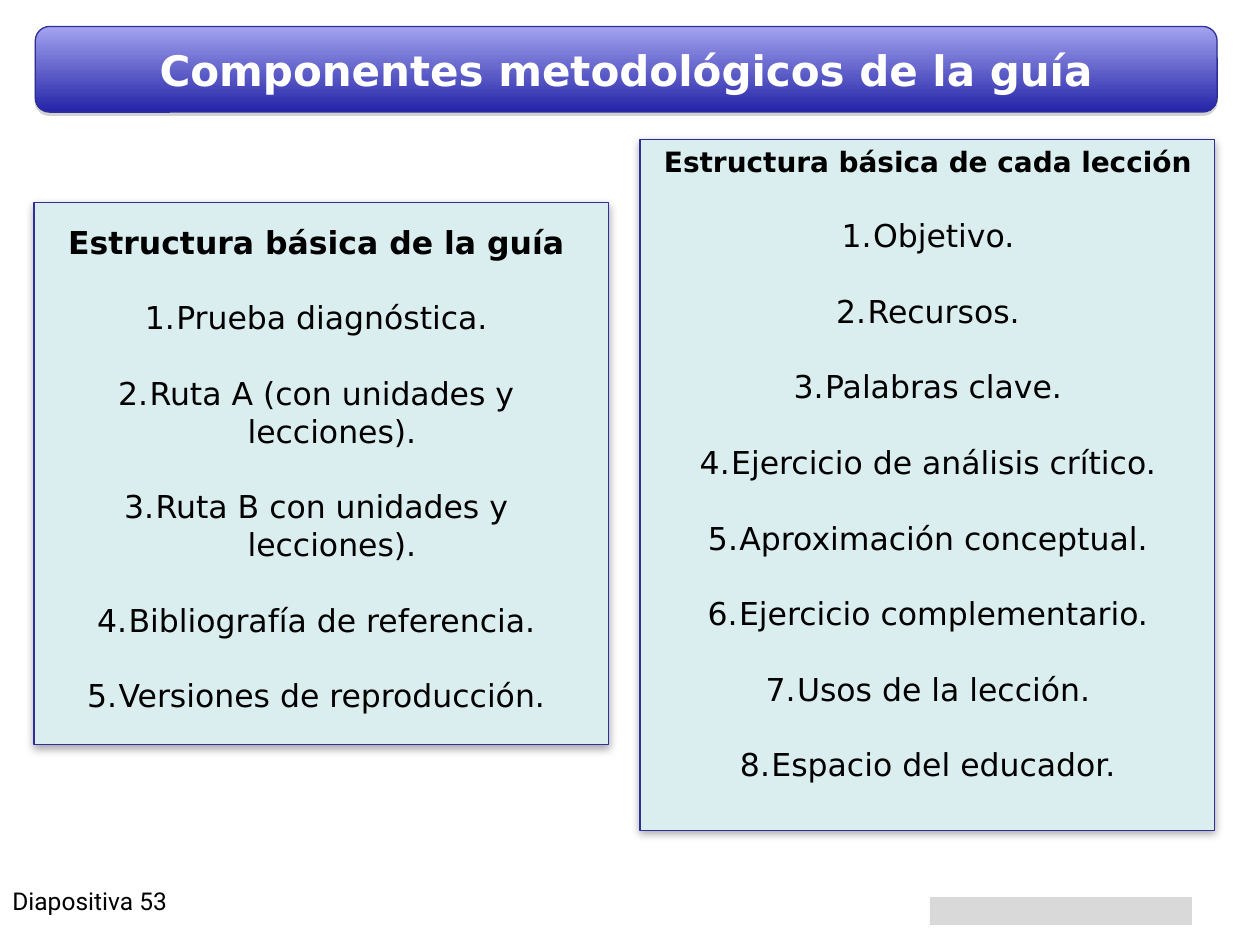
from dataclasses import dataclass

from lxml import etree
from pptx import Presentation
from pptx import util as u
from pptx.dml.color import RGBColor
from pptx.enum import shapes, text
from pptx.oxml import ns

TITLE = "Componentes metodológicos de la guía"
PANELS = [
    {
        "heading": "Estructura básica de la guía",
        "heading_size": 18,
        "items": [
            "Prueba diagnóstica.",
            "Ruta A (con unidades y lecciones).",
            "Ruta B con unidades y lecciones).",
            "Bibliografía de referencia.",
            "Versiones de reproducción.",
        ],
        "frame": (0.27, 1.61, 4.56, 4.3),
        "words": (0.3, 1.72, 4.42, 4.04),
    },
    {
        "heading": "Estructura básica de cada lección",
        "heading_size": 16,
        "items": [
            "Objetivo.",
            "Recursos.",
            "Palabras clave.",
            "Ejercicio de análisis crítico.",
            "Aproximación conceptual.",
            "Ejercicio complementario.",
            "Usos de la lección.",
            "Espacio del educador.",
        ],
        "frame": (5.08, 1.11, 4.56, 5.48),
        "words": (5.15, 1.1, 4.43, 5.22),
    },
]
TITLE_BAR = (0.28, 0.21, 9.38, 0.68)
PAGE_LABEL = ("Diapositiva 53", (0, 6.98, 2.33, 0.52))
FOOTER_MARK = (7.38, 7.12, 2.08, 0.22)


@dataclass(frozen=True)
class Theme:
    panel: str = "DAEDEF"
    outline: str = "2F2F98"
    bar_top: str = "A3A3EF"
    bar_bottom: str = "2424A8"
    ink: str = "000000"
    light: str = "FFFFFF"
    bar_shadow: str = "808080"
    mark: str = "D9D9D9"
    font: str = "DejaVu Sans"
    label_font: str = "Roboto"
    title_size: int = 24
    body_size: int = 18
    label_size: int = 14
    item_gap: float = 21.6
    number_indent: float = 0.25


THEME = Theme()


def inches(area):
    return [u.Inches(value) for value in area]


def fill_solid(shape, color):
    shape.fill.solid()
    shape.fill.fore_color.rgb = RGBColor.from_string(color)


def add_span(para, words, size, font=THEME.font, bold=False, color=THEME.ink):
    span = para.add_run()
    span.text = words
    span.font.size = u.Pt(size)
    span.font.name = font
    span.font.bold = bold
    span.font.color.rgb = RGBColor.from_string(color)


def add_text_box(page, area):
    box = page.shapes.add_textbox(*inches(area))
    box.text_frame.word_wrap = True
    return box.text_frame


def add_block(page, kind, area, shadow_color, blur):
    """Add an outlined shape with a soft shadow straight below it."""
    block = page.shapes.add_shape(kind, *inches(area))
    block.line.color.rgb = RGBColor.from_string(THEME.outline)
    block.line.width = u.Pt(0.75)
    block.shadow.inherit = False
    effects = block.element.spPr.find(ns.qn("a:effectLst"))
    shadow = etree.SubElement(
        effects, ns.qn("a:outerShdw"), blurRad=str(u.Pt(blur)),
        dist=str(u.Pt(1.8)), dir="5400000", rotWithShape="0")
    color = etree.SubElement(shadow, ns.qn("a:srgbClr"), val=shadow_color)
    etree.SubElement(color, ns.qn("a:alpha"), val="35000")
    return block


def number(para):
    """Give the paragraph an automatic number with a hanging indent."""
    props = para._p.get_or_add_pPr()
    indent = u.Inches(THEME.number_indent)
    props.set("marL", str(indent))
    props.set("indent", str(-indent))
    etree.SubElement(props, ns.qn("a:buFont"), typeface="+mj-lt")
    etree.SubElement(props, ns.qn("a:buAutoNum"), type="arabicPeriod")


def add_title(page):
    bar = add_block(page, shapes.MSO_SHAPE.ROUNDED_RECTANGLE, TITLE_BAR,
                    THEME.bar_shadow, 0)
    bar.adjustments[0] = 0.167
    bar.fill.gradient()
    bar.fill.gradient_angle = 270
    for stop, color in zip(bar.fill.gradient_stops,
                           (THEME.bar_top, THEME.bar_bottom)):
        stop.color.rgb = RGBColor.from_string(color)

    title = page.shapes.title
    title.left, title.top, title.width, title.height = inches(TITLE_BAR)
    page.shapes._spTree.append(title.element)
    frame = title.text_frame
    frame.word_wrap = False
    frame.auto_size = text.MSO_AUTO_SIZE.NONE
    frame.vertical_anchor = text.MSO_ANCHOR.MIDDLE
    para = frame.paragraphs[0]
    para.alignment = text.PP_ALIGN.CENTER
    add_span(para, TITLE, THEME.title_size, bold=True, color=THEME.light)


def add_panel(page, panel):
    frame = add_block(page, shapes.MSO_SHAPE.RECTANGLE, panel["frame"],
                      THEME.ink, 5)
    fill_solid(frame, THEME.panel)

    words = add_text_box(page, panel["words"])
    heading = words.paragraphs[0]
    heading.alignment = text.PP_ALIGN.CENTER
    add_span(heading, panel["heading"], panel["heading_size"], bold=True)
    for item in panel["items"]:
        para = words.add_paragraph()
        para.alignment = text.PP_ALIGN.CENTER
        para.space_before = u.Pt(THEME.item_gap)
        number(para)
        add_span(para, item, THEME.body_size)


def add_footer(page):
    label, area = PAGE_LABEL
    add_span(add_text_box(page, area).paragraphs[0], label,
             THEME.label_size, THEME.label_font)
    mark = page.shapes.add_shape(shapes.MSO_SHAPE.RECTANGLE,
                                 *inches(FOOTER_MARK))
    mark.shadow.inherit = False
    mark.line.fill.background()
    fill_solid(mark, THEME.mark)


def main():
    deck = Presentation()
    deck.slide_width, deck.slide_height = u.Inches(10), u.Inches(7.5)
    page = deck.slides.add_slide(deck.slide_layouts[5])
    add_footer(page)
    add_title(page)
    for panel in PANELS:
        add_panel(page, panel)
    deck.save("out.pptx")


if __name__ == "__main__":
    main()
